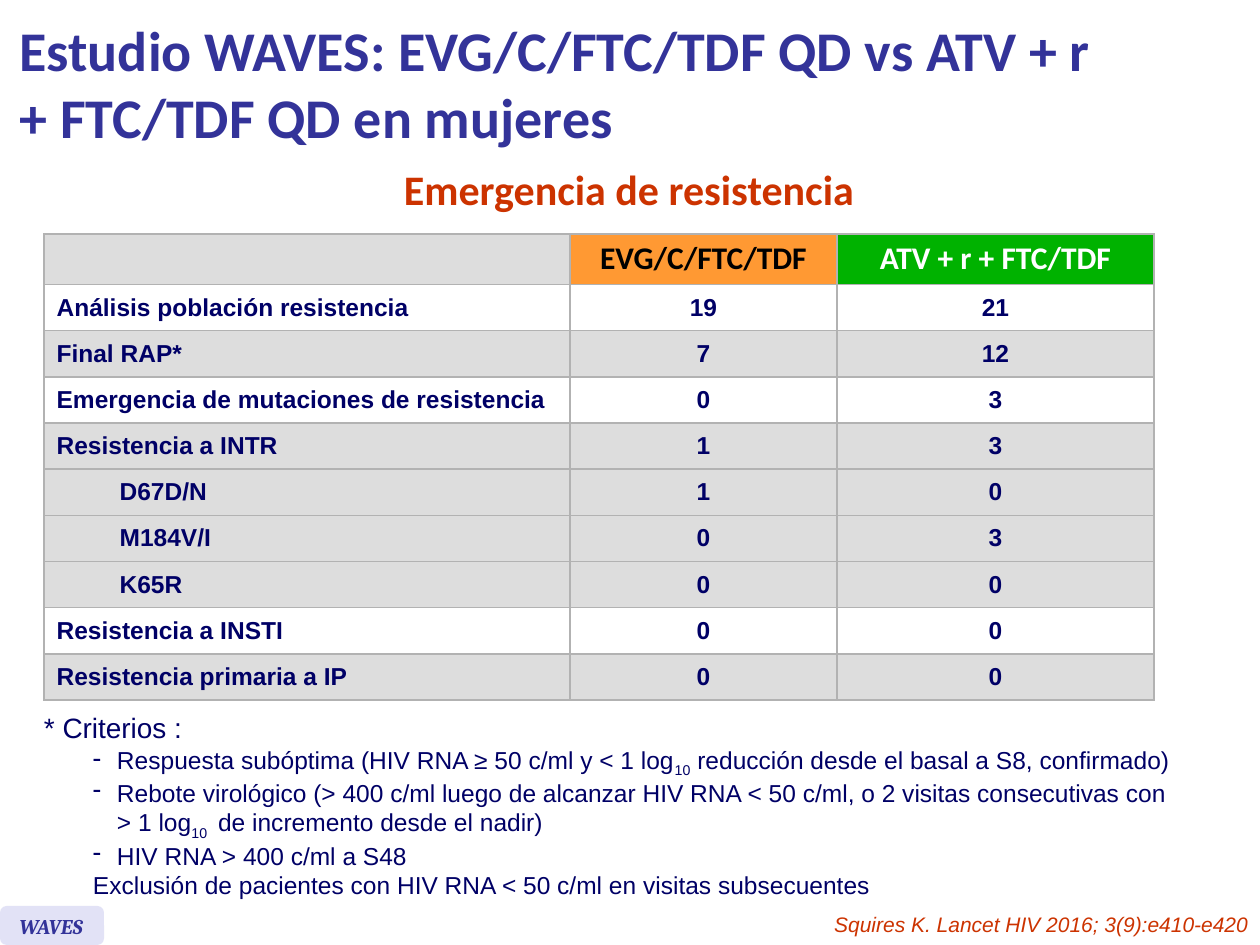
"""Builds the WAVES resistance slide: results table, criteria and reference."""
import copy
from dataclasses import dataclass

import pptx
import pptx.dml.color
import pptx.enum.shapes
import pptx.enum.text
import pptx.oxml
import pptx.oxml.ns
import pptx.util
from lxml import etree

ALIGN = pptx.enum.text.PP_ALIGN
ANCHOR = pptx.enum.text.MSO_ANCHOR


@dataclass(frozen=True)
class Theme:
    scale: float = 914400 / 126
    heading: str = "Calibri"
    body: str = "Arial"
    badge: str = "Cambria"
    blue: str = "333399"
    navy: str = "000066"
    red: str = "CC3300"
    lilac: str = "E2E2F6"
    grey: str = "DDDDDD"
    rule: str = "B2B2B2"
    white: str = "FFFFFF"
    black: str = "000000"
    orange: str = "FF9933"
    green: str = "00B200"
    title_size: int = 32
    subtitle_size: int = 24
    header_size: int = 18
    lead_size: int = 16
    text_size: int = 14
    small_size: int = 12


class Deck:
    def __init__(self, theme, width, height):
        self.theme = theme
        self.prs = pptx.Presentation()
        self.prs.slide_width, self.prs.slide_height = self.px(width), self.px(height)
        self.s = self.prs.slides.add_slide(self.prs.slide_layouts[5])

    def px(self, n):
        return pptx.util.Emu(round(n * self.theme.scale))

    def box(self, *lengths):
        return [self.px(n) for n in lengths]

    def color(self, value):
        return pptx.dml.color.RGBColor.from_string(value)

    def run(self, p, text, font, size, color, bold=False, italic=False, base=0):
        for i, line in enumerate(text.split("\n")):
            if i:
                p.add_line_break()
                p._p[-1].append(copy.deepcopy(r._r.rPr))
            r = p.add_run()
            r.text = line
            r.font.name, r.font.size = font, pptx.util.Pt(size)
            r.font.bold, r.font.italic = bold, italic
            r.font.color.rgb = self.color(color)
            if base:
                r._r.get_or_add_rPr().set("baseline", str(base * 1000))

    def indent(self, p, left, first=0, bullet=None):
        p.level = 1
        pPr = p._p.get_or_add_pPr()
        pPr.set("marL", str(self.px(left)))
        pPr.set("indent", str(self.px(first)))
        if bullet:
            etree.SubElement(pPr, pptx.oxml.ns.qn("a:buChar")).set("char", bullet)

    def title(self, at, text):
        sp = self.s.shapes.title
        sp.left, sp.top, sp.width, sp.height = self.box(*at)
        tf = sp.text_frame
        tf.auto_size = pptx.enum.text.MSO_AUTO_SIZE.NONE
        tf.vertical_anchor = ANCHOR.MIDDLE
        p = tf.paragraphs[0]
        p.alignment = ALIGN.LEFT
        self.run(p, text, self.theme.heading, self.theme.title_size, self.theme.blue, True)

    def text(self, at, text, align=ALIGN.LEFT, wrap=True, **style):
        tf = self.s.shapes.add_textbox(*self.box(*at)).text_frame
        tf.word_wrap = wrap
        p = tf.paragraphs[0]
        p.alignment = align
        self.run(p, text, **style)

    def criteria(self, at, lead, items):
        t = self.theme
        tf = self.s.shapes.add_textbox(*self.box(*at)).text_frame
        tf.word_wrap = True
        tf.margin_left = tf.margin_right = tf.margin_top = tf.margin_bottom = 0
        self.run(tf.paragraphs[0], lead, t.body, t.lead_size, t.navy)
        for bullet, runs in items:
            p = tf.add_paragraph()
            self.indent(p, 73, -24, bullet)
            for text, base in runs:
                self.run(p, text, t.body, t.text_size, t.navy, base=base)

    def panel(self, at, color):
        sp = self.s.shapes.add_shape(
            pptx.enum.shapes.MSO_SHAPE.ROUNDED_RECTANGLE, *self.box(*at))
        sp.shadow.inherit = False
        sp.fill.solid()
        sp.fill.fore_color.rgb = self.color(color)
        sp.line.fill.background()

    def cell(self, cell, fill):
        tcPr = cell._tc.get_or_add_tcPr()
        for side in "LRTB":
            tcPr.append(pptx.oxml.parse_xml(
                f'<a:ln{side} {pptx.oxml.ns.nsdecls("a")} w="12700"><a:solidFill>'
                f'<a:srgbClr val="{self.theme.rule}"/></a:solidFill></a:ln{side}>'))
        cell.fill.solid()
        cell.fill.fore_color.rgb = self.color(fill)
        cell.vertical_anchor = ANCHOR.MIDDLE
        return cell.text_frame.paragraphs[0]

    def table(self, at, widths, header_height, header, rows):
        t = self.theme
        frame = self.s.shapes.add_table(len(rows) + 1, len(widths), *self.box(*at))
        table = frame.table
        for column, width in zip(table.columns, widths):
            column.width = self.px(width)
        for row in table.rows:
            row.height = self.px((at[3] - header_height) / len(rows))
        table.rows[0].height = self.px(header_height)
        for i, (text, fill, color) in enumerate(header):
            p = self.cell(table.cell(0, i), fill)
            p.alignment = ALIGN.CENTER
            p.line_spacing = pptx.util.Pt(21.6)
            if text:
                self.run(p, text, t.heading, t.header_size, color, True)
        for i, (fill, nested, *values) in enumerate(rows, 1):
            for j, value in enumerate(values):
                p = self.cell(table.cell(i, j), fill)
                p.alignment = ALIGN.CENTER if j else ALIGN.LEFT
                if nested and not j:
                    self.indent(p, 63)
                self.run(p, str(value), t.body, t.text_size, t.navy, True)


def main():
    t = Theme()
    deck = Deck(t, 1260, 945)
    deck.text((389, 157, 480, 63), "Emergencia de resistencia", ALIGN.CENTER, False,
              font=t.heading, size=t.subtitle_size, color=t.red, bold=True)
    deck.table(
        (44, 234, 1110, 466), (526, 267, 317), 50,
        [("", t.grey, t.black),
         ("EVG/C/FTC/TDF", t.orange, t.black),
         ("ATV + r + FTC/TDF", t.green, t.white)],
        [(t.white, False, "Análisis población resistencia", 19, 21),
         (t.grey, False, "Final RAP*", 7, 12),
         (t.white, False, "Emergencia de mutaciones de resistencia", 0, 3),
         (t.grey, False, "Resistencia a INTR", 1, 3),
         (t.grey, True, "D67D/N", 1, 0),
         (t.grey, True, "M184V/I", 0, 3),
         (t.grey, True, "K65R", 0, 0),
         (t.white, False, "Resistencia a INSTI", 0, 0),
         (t.grey, False, "Resistencia primaria a IP", 0, 0)])
    deck.criteria((44, 711, 1171, 183), "* Criterios :", [
        ("-", [("Respuesta subóptima (HIV RNA ≥ 50 c/ml y < 1 log", 0), ("10", -25),
               (" reducción desde el basal a S8, confirmado)", 0)]),
        ("-", [("Rebote virológico (> 400 c/ml luego de alcanzar HIV RNA < 50 c/ml, "
                "o 2 visitas consecutivas con\n> 1 log", 0), ("10 ", -25),
               (" de incremento desde el nadir)", 0)]),
        ("-", [("HIV RNA > 400 c/ml a S48", 0)]),
        (None, [("Exclusión de pacientes con HIV RNA < 50 c/ml en visitas subsecuentes", 0)])])
    deck.title((7, 6, 1129, 153),
               "Estudio WAVES: EVG/C/FTC/TDF QD vs ATV + r\n+ FTC/TDF QD en mujeres")
    deck.panel((0, 906, 104, 39), t.lilac)
    deck.text((7, 907, 97, 38), "WAVES", font=t.badge, size=t.small_size,
              color=t.blue, bold=True, italic=True)
    deck.text((755, 905, 506, 38), "Squires K. Lancet HIV 2016; 3(9):e410-e420", ALIGN.RIGHT,
              font=t.body, size=t.small_size, color=t.red, italic=True)
    deck.prs.save("out.pptx")


if __name__ == "__main__":
    main()
